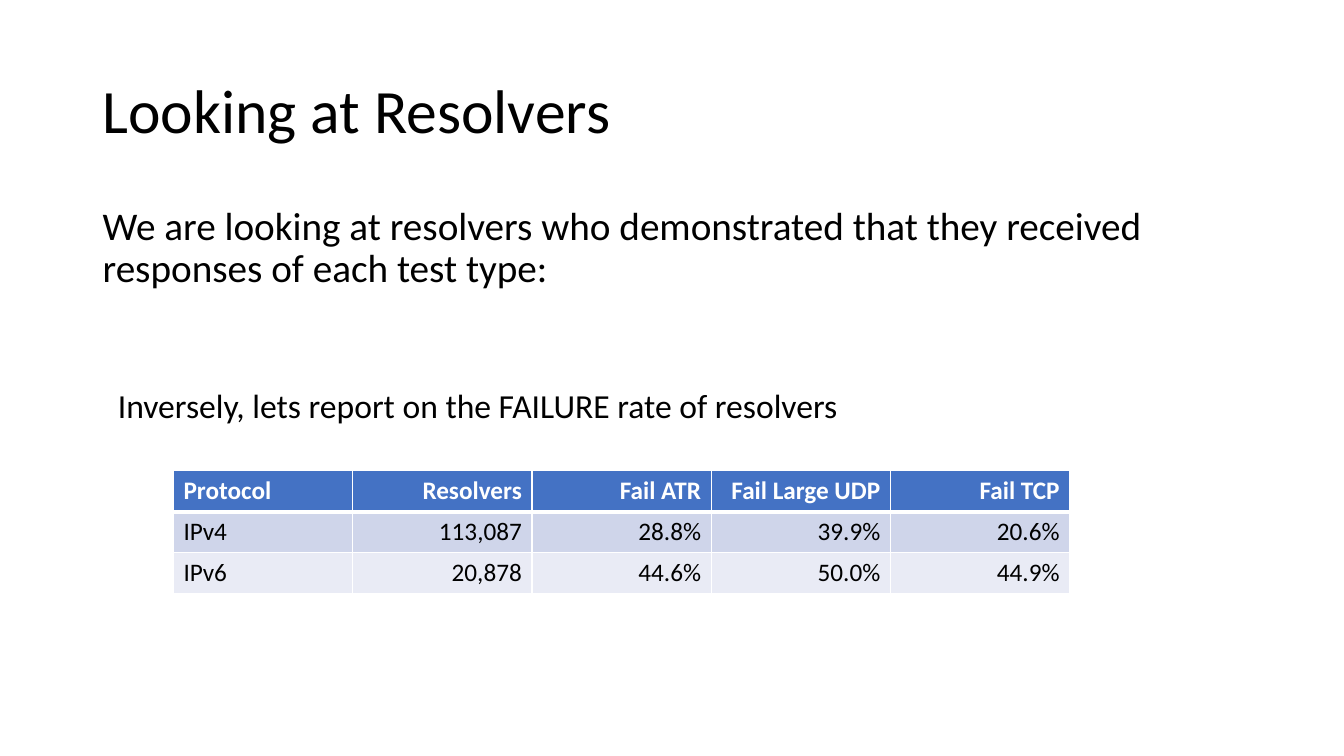
import dataclasses

import lxml.etree
import pptx
import pptx.dml.color
import pptx.enum.text
import pptx.oxml.ns
import pptx.util

ANCHOR = pptx.enum.text.MSO_ANCHOR
ALIGN = pptx.enum.text.PP_ALIGN


@dataclasses.dataclass(frozen=True)
class Theme:
    """Colours, font and type sizes of the slide."""
    font: str = "Calibri"
    ink: str = "000000"
    paper: str = "FFFFFF"
    header: str = "4472C4"
    bands: tuple = ("CFD5EA", "E9EBF5")
    title: int = 44
    body: int = 28
    note: int = 24
    cell: int = 18


THEME = Theme()
WIDTH, HEIGHT = 13.33, 7.5
FAILURE_RATES = (
    ("Protocol", "Resolvers", "Fail ATR", "Fail Large UDP", "Fail TCP"),
    ("IPv4", "113,087", "28.8%", "39.9%", "20.6%"),
    ("IPv6", "20,878", "44.6%", "50.0%", "44.9%"),
)


def rgb(colour):
    """Turn a hex string into a colour."""
    return pptx.dml.color.RGBColor.from_string(colour)


def write(frame, text, size, colour=THEME.ink, bold=False, align=ALIGN.LEFT,
          anchor=ANCHOR.TOP, wrap=True, line=1.0, before=0):
    """Write one formatted paragraph into a text frame."""
    frame.word_wrap = wrap
    frame.vertical_anchor = anchor
    paragraph = frame.paragraphs[0]
    paragraph.alignment = align
    paragraph.line_spacing = line
    paragraph.space_before = pptx.util.Pt(before)
    run = paragraph.add_run()
    run.text = text
    run.font.name = THEME.font
    run.font.size = pptx.util.Pt(size)
    run.font.bold = bold
    run.font.color.rgb = rgb(colour)


def place_text(slide, box, text, size, **style):
    """Place a line of text in a box given in inches."""
    area = slide.shapes.add_textbox(*map(pptx.util.Inches, box))
    write(area.text_frame, text, size, **style)


def rule_cell(cell, top, bottom):
    """Draw the four borders of a cell, widths in points."""
    properties = cell._tc.get_or_add_tcPr()
    for side, width in (("L", 1), ("R", 1), ("T", top), ("B", bottom)):
        edge = lxml.etree.SubElement(
            properties, pptx.oxml.ns.qn(f"a:ln{side}"), w=str(pptx.util.Pt(width)))
        fill = lxml.etree.SubElement(edge, pptx.oxml.ns.qn("a:solidFill"))
        lxml.etree.SubElement(fill, pptx.oxml.ns.qn("a:srgbClr"), val=THEME.paper)


def place_heading(slide, box):
    """Place the title and the introduction on a shared left edge."""
    left, top, width, height = box
    place_text(slide, (left, top, width, 1.45), "Looking at Resolvers",
               THEME.title, anchor=ANCHOR.MIDDLE, line=0.9)
    place_text(slide, (left, top + 1.6, width, height - 1.6),
               "We are looking at resolvers who demonstrated that they received "
               "responses of each test type:", THEME.body, line=0.9, before=10)


def place_rates(slide, box):
    """Place the table of failure rates on an even grid."""
    table = slide.shapes.add_table(
        len(FAILURE_RATES), len(FAILURE_RATES[0]),
        *map(pptx.util.Inches, box)).table
    table.horz_banding = False
    for row, values in enumerate(FAILURE_RATES):
        heading = row == 0
        for column, value in enumerate(values):
            cell = table.cell(row, column)
            rule_cell(cell, top=3 if row == 1 else 1, bottom=3 if heading else 1)
            cell.fill.solid()
            cell.fill.fore_color.rgb = rgb(
                THEME.header if heading else THEME.bands[(row - 1) % 2])
            write(cell.text_frame, value, THEME.cell, bold=heading,
                  colour=THEME.paper if heading else THEME.ink,
                  align=ALIGN.RIGHT if column else ALIGN.LEFT)


def place_failures(slide, box):
    """Place the failure note with its table below."""
    left, top, width, height = box
    place_text(slide, (left, top, 7.41, 0.5),
               "Inversely, lets report on the FAILURE rate of resolvers",
               THEME.note, wrap=False)
    place_rates(slide, (left + 0.65, top + 0.9, width - 0.65, height - 0.9))


def main():
    """Build and save the slide."""
    deck = pptx.Presentation()
    deck.slide_width = pptx.util.Inches(WIDTH)
    deck.slide_height = pptx.util.Inches(HEIGHT)
    slide = deck.slides.add_slide(deck.slide_layouts[6])
    place_heading(slide, (0.92, 0.4, 11.5, 2.97))
    place_failures(slide, (1.07, 3.77, 9.54, 2.12))
    deck.save("out.pptx")


if __name__ == "__main__":
    main()
